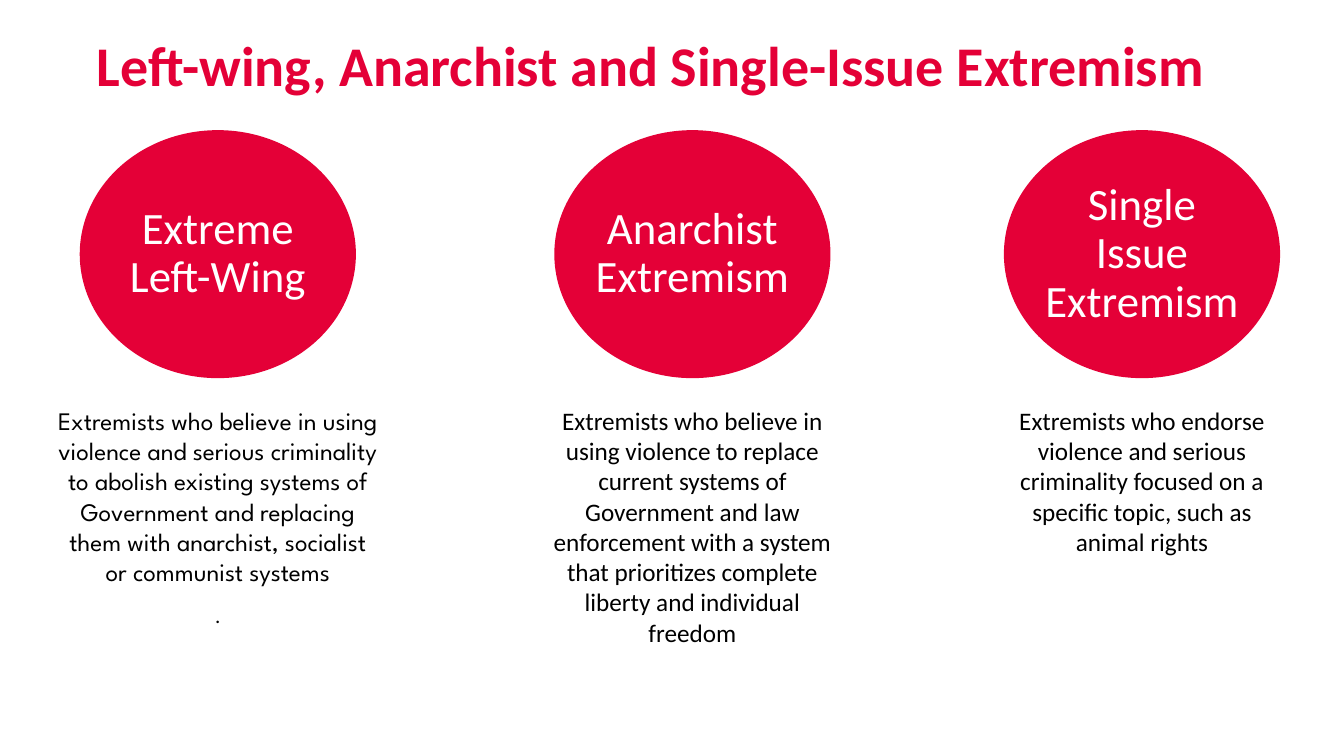
from pptx import Presentation
from pptx.dml.color import RGBColor
from pptx.enum import shapes, text
from pptx.util import Cm, Pt

TITLE = "Left-wing, Anarchist and Single-Issue Extremism"
# Each column: heading, centre and text width in cm, paragraphs as (words, size, font)
COLUMNS = [
    ("Extreme Left-Wing", 5.49, 8.15, [
        ("Extremists who believe in using violence and serious criminality to abolish "
         "existing systems of Government and replacing them with anarchist, socialist "
         "or communist systems", 18, "League Spartan"),
        (".", 15, "Calibri"),
    ]),
    ("Anarchist Extremism", 17.45, 7.77, [
        ("Extremists who believe in using violence to replace current systems of "
         "Government and law enforcement with a system that prioritizes complete "
         "liberty and individual freedom", 18, "Calibri"),
    ]),
    ("Single Issue Extremism", 28.78, 6.96, [
        ("Extremists who endorse violence and serious criminality focused on a "
         "specific topic, such as animal rights", 18, "Calibri"),
    ]),
]
COLORS = {"red": "E40037", "white": "FFFFFF", "black": "000000"}
CIRCLE_TOP, CIRCLE_WIDTH, CIRCLE_HEIGHT = 3.28, 6.96, 6.25
TEXT_TOP, TEXT_HEIGHT = 10.21, 6.25


def write(shape, paragraphs, color="black", bold=False, align=text.PP_ALIGN.CENTER,
          anchor=text.MSO_ANCHOR.TOP, line_spacing=1.0, space_after=0):
    """Fill a shape with paragraphs given as (words, size, font)."""
    frame = shape.text_frame
    frame.word_wrap = True
    frame.auto_size = text.MSO_AUTO_SIZE.NONE
    frame.vertical_anchor = anchor
    frame.margin_left = frame.margin_right = frame.margin_top = frame.margin_bottom = 0
    for index, (words, size, font) in enumerate(paragraphs):
        paragraph = frame.add_paragraph() if index else frame.paragraphs[0]
        paragraph.alignment = align
        paragraph.line_spacing = line_spacing
        paragraph.space_before = Pt(0)
        paragraph.space_after = Pt(space_after)
        run = paragraph.add_run()
        run.text = words
        run.font.size = Pt(size)
        run.font.name = font
        run.font.bold = bold
        run.font.color.rgb = RGBColor.from_string(COLORS[color])


def add_column(slide, heading, center, text_width, paragraphs):
    circle = slide.shapes.add_shape(
        shapes.MSO_SHAPE.OVAL, Cm(center - CIRCLE_WIDTH / 2), Cm(CIRCLE_TOP),
        Cm(CIRCLE_WIDTH), Cm(CIRCLE_HEIGHT))
    circle.shadow.inherit = False
    circle.fill.solid()
    circle.fill.fore_color.rgb = RGBColor.from_string(COLORS["red"])
    circle.line.fill.background()
    write(circle, [(heading, 32, "Calibri")], color="white",
          anchor=text.MSO_ANCHOR.MIDDLE, line_spacing=0.9)

    description = slide.shapes.add_textbox(
        Cm(center - text_width / 2), Cm(TEXT_TOP), Cm(text_width), Cm(TEXT_HEIGHT))
    write(description, paragraphs, space_after=11.3)


def main():
    presentation = Presentation()
    presentation.slide_width, presentation.slide_height = Cm(33.87), Cm(19.05)
    slide = presentation.slides.add_slide(presentation.slide_layouts.get_by_name("Title Only"))

    title = slide.shapes.title
    title.left, title.top, title.width, title.height = Cm(2.44), Cm(0.76), Cm(30.05), Cm(2.95)
    write(title, [(TITLE, 40, "Calibri")], color="red", bold=True, align=text.PP_ALIGN.LEFT)

    for column in COLUMNS:
        add_column(slide, *column)
    presentation.save("out.pptx")


if __name__ == "__main__":
    main()
